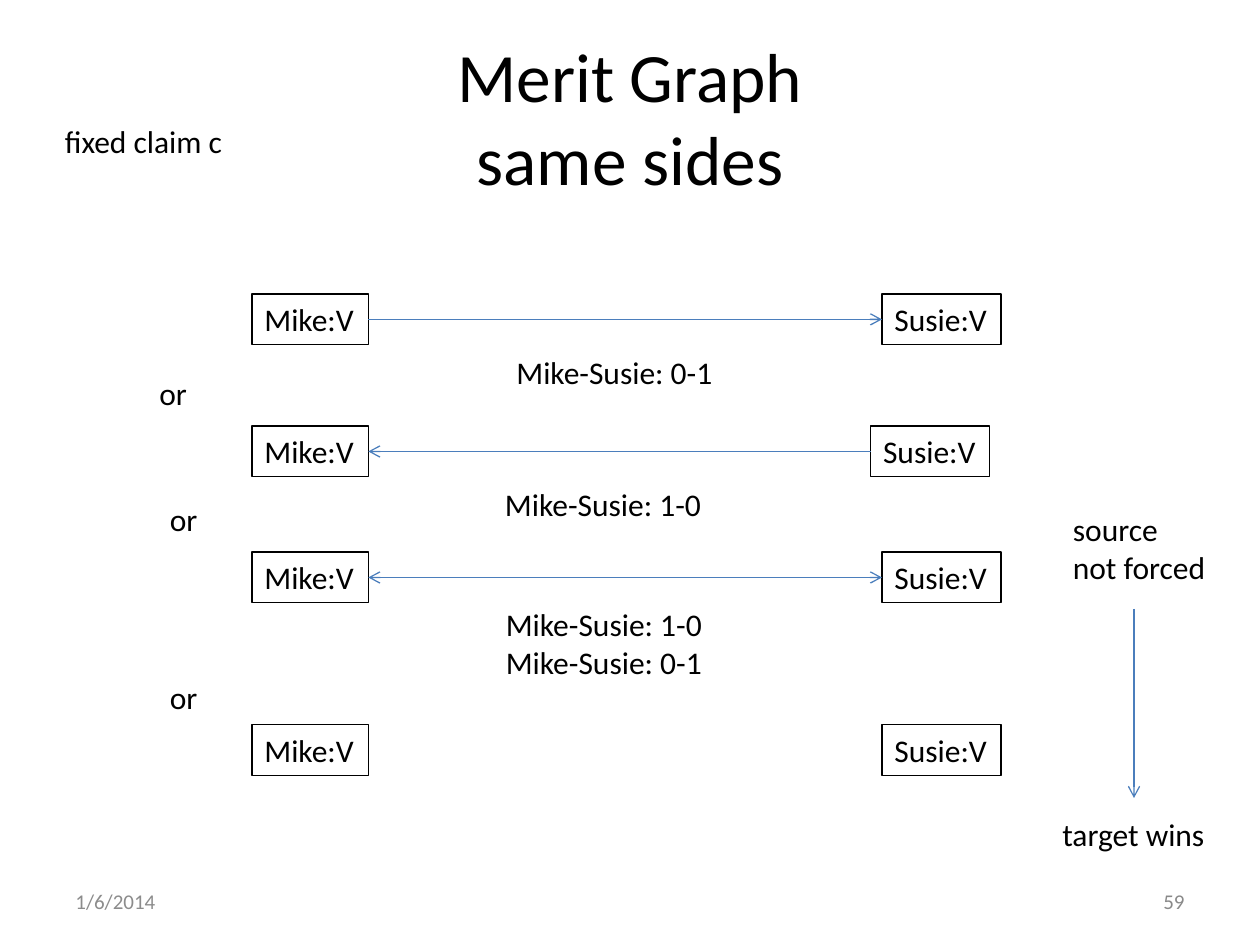
from pptx import Presentation
from pptx.dml.color import RGBColor
from pptx.enum.shapes import MSO_CONNECTOR, MSO_SHAPE
from pptx.enum.text import MSO_ANCHOR, PP_ALIGN
from pptx.oxml.ns import qn
from pptx.util import Pt
from lxml.etree import SubElement

# Content
TITLE = "Merit Graph\vsame sides"
SOURCE, TARGET = "Mike:V", "Susie:V"

# top, left of Susie, arrowheads at (Mike, Susie)
ROWS = [
    (168, 504, (False, True)),
    (243.5, 497.5, (True, False)),
    (315.5, 504, (True, True)),
    (414, 504, (False, False)),
]
# text, left, top, width, height
LABELS = [
    ("fixed claim c", 30, 66, 106, 29),
    ("or", 84, 210, 30, 29),
    ("or", 90, 282, 30, 29),
    ("or", 90, 384, 30, 29),
    ("Mike-Susie: 0-1", 288, 198, 128, 29),
    ("Mike-Susie: 1-0", 281.5, 273.5, 128, 29),
    ("Mike-Susie: 1-0\nMike-Susie: 0-1", 282, 342, 128, 73),
    ("source\nnot forced", 606, 288, 91.5, 51),
    ("target wins", 600, 462, 96.5, 29),
]
# text, left, alignment, colour
FOOTERS = [
    ("1/6/2014", 36, PP_ALIGN.LEFT, "8C8C8C"),
    ("59", 516, PP_ALIGN.RIGHT, "898989"),
]

# Formats
BLACK, BLUE = "000000", "4B7EBC"
MIKE_LEFT, MIKE_WIDTH, SUSIE_WIDTH, NODE_HEIGHT = 144, 66.5, 68, 29
LEFT_SITE, RIGHT_SITE = 1, 3
LABEL_FRAME = {"word_wrap": False, "vertical_anchor": MSO_ANCHOR.TOP}
MIDDLE_FRAME = {"word_wrap": True, "vertical_anchor": MSO_ANCHOR.MIDDLE}


def colour(hex_string):
    return RGBColor.from_string(hex_string)


def apply(target, values):
    for name, value in values.items():
        setattr(target, name, value)


def write(shape, text, frame_format, size=18, align=PP_ALIGN.LEFT, ink=BLACK):
    frame = shape.text_frame
    frame.text = text
    apply(frame, frame_format)
    for paragraph in frame.paragraphs:
        paragraph.alignment = align
        for run in paragraph.runs:
            apply(run.font, {"name": "Calibri", "size": Pt(size)})
            run.font.color.rgb = colour(ink)


def outline(shape, ink):
    shape.line.color.rgb = colour(ink)
    shape.line.width = Pt(0.75)


def add_label(text, left, top, width, height, frame_format=LABEL_FRAME, **style):
    label = slide.shapes.add_textbox(Pt(left), Pt(top), Pt(width), Pt(height))
    write(label, text, frame_format, **style)


def add_node(text, left, top, width):
    node = slide.shapes.add_shape(
        MSO_SHAPE.RECTANGLE, Pt(left), Pt(top), Pt(width), Pt(NODE_HEIGHT))
    node.shadow.inherit = False
    node.fill.background()
    outline(node, BLACK)
    write(node, text, LABEL_FRAME)
    return node


def add_arrow(x1, y1, x2, y2, head=False, tail=True):
    arrow = slide.shapes.add_connector(
        MSO_CONNECTOR.STRAIGHT, Pt(x1), Pt(y1), Pt(x2), Pt(y2))
    outline(arrow, BLUE)
    for end, shown in (("a:headEnd", head), ("a:tailEnd", tail)):
        if shown:
            SubElement(arrow.line._get_or_add_ln(), qn(end), type="arrow")
    SubElement(arrow._element.spPr, qn("a:effectLst"))
    return arrow


presentation = Presentation()
apply(presentation, {"slide_width": Pt(720), "slide_height": Pt(540)})
slide = presentation.slides.add_slide(presentation.slide_layouts[5])

# Title
title = slide.shapes.title
apply(title, {"left": Pt(36), "top": Pt(21.6), "width": Pt(648), "height": Pt(90)})
write(title, TITLE, MIDDLE_FRAME, size=39.6, align=PP_ALIGN.CENTER)

# Graph rows
for top, susie_left, (to_mike, to_susie) in ROWS:
    mike = add_node(SOURCE, MIKE_LEFT, top, MIKE_WIDTH)
    susie = add_node(TARGET, susie_left, top, SUSIE_WIDTH)
    if to_mike or to_susie:
        middle = top + NODE_HEIGHT / 2
        edge = add_arrow(MIKE_LEFT + MIKE_WIDTH, middle, susie_left, middle,
                         to_mike, to_susie)
        edge.begin_connect(mike, RIGHT_SITE)
        edge.end_connect(susie, LEFT_SITE)

# Labels and the legend arrow
for label in LABELS:
    add_label(*label)
add_arrow(648, 348, 648, 456)

# Date and page number
for text, left, align, ink in FOOTERS:
    add_label(text, left, 500.5, 168, 28.75, MIDDLE_FRAME,
              size=12, align=align, ink=ink)

presentation.save("out.pptx")
